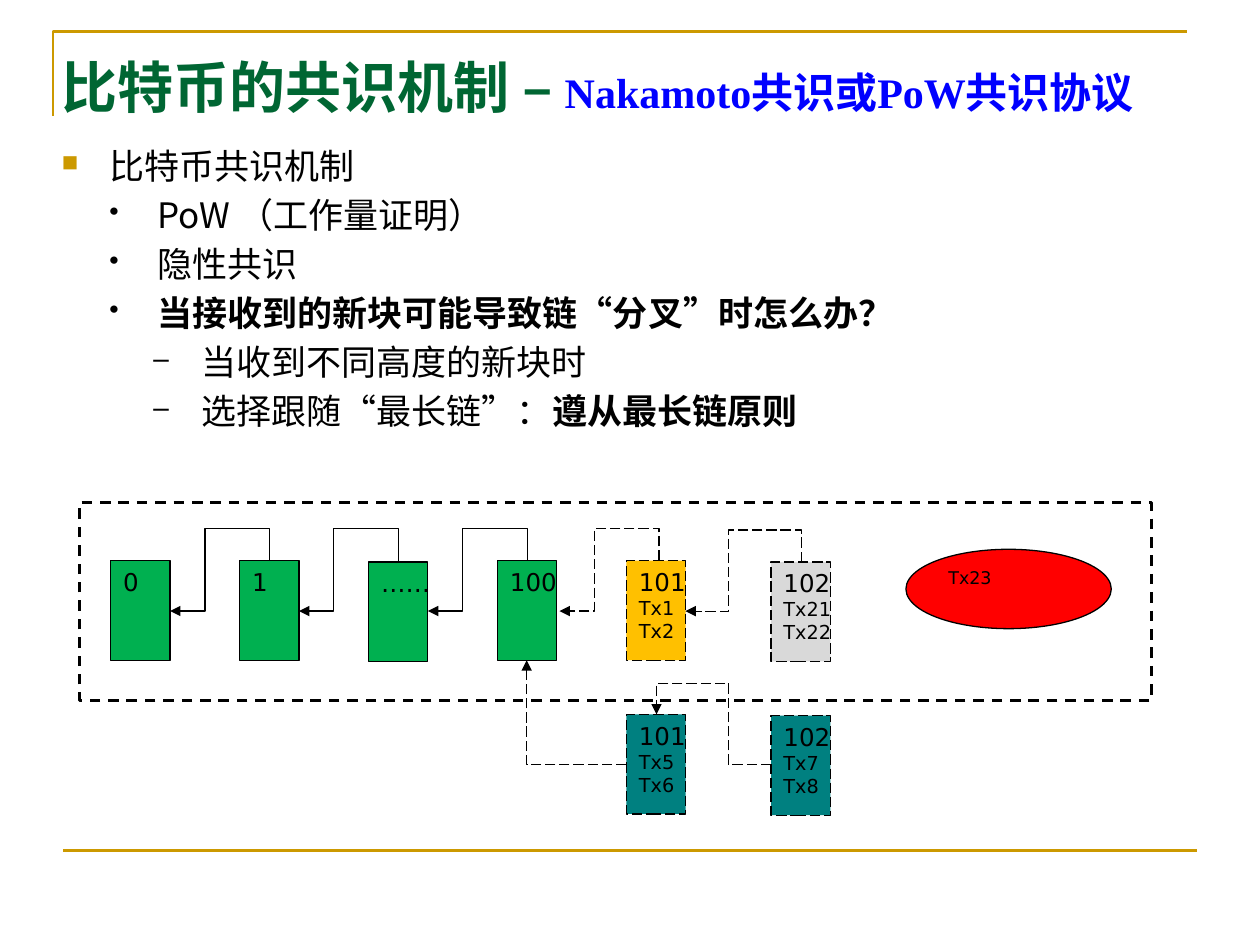
from lxml.etree import SubElement
from pptx import Presentation
from pptx.dml.color import RGBColor
from pptx.enum.dml import MSO_LINE as Dash
from pptx.enum.shapes import MSO_CONNECTOR as Conn, MSO_SHAPE as Form
from pptx.enum.text import MSO_ANCHOR as Anchor, PP_ALIGN as Align
from pptx.oxml.ns import qn
from pptx.util import Inches, Pt

BLACK = RGBColor(0, 0, 0)
GOLD = RGBColor(0xCC, 0x99, 0x00)
PINE = RGBColor(0x00, 0x66, 0x33)
BLUE = RGBColor(0x00, 0x00, 0xFF)
GREEN = RGBColor(0x00, 0xB0, 0x50)
AMBER = RGBColor(0xFF, 0xC0, 0x00)
GREY = RGBColor(0xD9, 0xD9, 0xD9)
TEAL = RGBColor(0x00, 0x80, 0x80)
RED = RGBColor(0xFF, 0x00, 0x00)
CJK, SANS, SERIF = "Noto Sans CJK SC", "DejaVu Sans", "Times New Roman"

TITLE = [("比特币的共识机制 –", 32, PINE), (" ", 28, PINE),
         ("Nakamoto共识或PoW共识协议", 24, BLUE)]

# level, runs of (text, bold)
BODY = [
    (0, [("比特币共识机制", False)]),
    (1, [("PoW （工作量证明）", False)]),
    (1, [("隐性共识", False)]),
    (1, [("当接收到的新块可能导致链“分叉”时怎么办？", True)]),
    (2, [("当收到不同高度的新块时", False)]),
    (2, [("选择跟随“最长链”：", False), ("遵从最长链原则", True)]),
]
# left indent, bullet, bullet size in percent, bullet colour
LEVELS = [(0.38, "■", 65, GOLD), (0.76, "•", 80, None), (1.11, "–", 80, None)]

WIDE, HIGH = 0.47, 0.79
STEP, LEFT, ROW = 1.023, 0.88, 4.45
FORK = 5.67
COLS = [LEFT + i * STEP for i in range(5)] + [6.12]

# column, top, fill, dash, lines
BLOCKS = [
    (0, ROW, GREEN, None, ["0"]),
    (1, ROW, GREEN, None, ["1"]),
    (2, ROW + 0.01, GREEN, None, ["……"]),
    (3, ROW, GREEN, None, ["100"]),
    (4, ROW, AMBER, Dash.LONG_DASH, ["101", "Tx1", "Tx2"]),
    (5, ROW + 0.01, GREY, Dash.LONG_DASH, ["102", "Tx21", "Tx22"]),
    (4, FORK, TEAL, Dash.LONG_DASH, ["101", "Tx5", "Tx6"]),
    (5, FORK + 0.01, TEAL, Dash.LONG_DASH, ["102", "Tx7", "Tx8"]),
]

# start, end, bends, turn, dash
HOP = (-0.64, 0.65)
LINKS = [((2.14 + i * STEP, ROW), (1.35 + i * STEP, 4.85), HOP, 270, None)
         for i in range(3)] + [
    ((5.23, ROW), (4.44, 4.85), HOP, 270, Dash.LONG_DASH),
    ((6.36, 4.46), (5.44, 4.85), (-0.65, 0.63), 270, Dash.LONG_DASH),
    ((4.97, 6.07), (4.18, 5.24), (), 180, Dash.LONG_DASH),
    ((6.12, 6.07), (5.21, 5.67), (0.37, 1.62), 180, Dash.LONG_DASH),
]


def add_run(para, text, size, font, color, bold=False):
    run = para.add_run()
    run.text = text
    face = run.font
    face.size, face.name, face.bold = Pt(size), font, bold
    face.color.rgb = color
    SubElement(face._element, qn("a:ea"), typeface=CJK)


def style(line, color, width, dash=None):
    line.color.rgb = color
    line.width = Pt(width)
    if dash:
        line.dash_style = dash


def add_form(shapes, form, box, fill, width=0.75, dash=None):
    shape = shapes.add_shape(form, *map(Inches, box))
    shape.shadow.inherit = False
    if fill is None:
        shape.fill.background()
    else:
        shape.fill.solid()
        shape.fill.fore_color.rgb = fill
    style(shape.line, BLACK, width, dash)
    return shape


def label(shape, lines, sizes):
    frame = shape.text_frame
    frame.word_wrap = False
    frame.vertical_anchor = Anchor.TOP
    for i, (text, size) in enumerate(zip(lines, sizes)):
        para = frame.add_paragraph() if i else frame.paragraphs[0]
        para.alignment = Align.LEFT
        add_run(para, text, size, SANS, BLACK)


def add_line(shapes, kind, start, end, color, width, dash=None):
    line = shapes.add_connector(kind, *map(Inches, start + end))
    style(line.line, color, width, dash)
    SubElement(line.element.spPr, qn("a:effectLst"))
    return line


def add_link(shapes, start, end, bends, turn, dash):
    """Draw an elbow arrow whose box is turned about its centre."""
    mid = [(a + b) / 2 for a, b in zip(start, end)]
    size = [abs(a - b) for a, b in zip(start, end)]
    if turn == 270:
        size.reverse()
    low = tuple(m - s / 2 for m, s in zip(mid, size))
    high = tuple(m + s / 2 for m, s in zip(mid, size))
    link = add_line(shapes, Conn.ELBOW, low, high, BLACK, 0.75, dash)
    props = link.element.spPr
    place = props.find(qn("a:xfrm"))
    place.set("rot", str(turn * 60000))
    if turn == 270:
        place.set("flipH", "1")
        place.set("flipV", "1")
    geom = props.find(qn("a:prstGeom"))
    geom.set("prst", f"bentConnector{len(bends) + 2}")
    guides = geom.find(qn("a:avLst"))
    for i, bend in enumerate(bends, 1):
        SubElement(guides, qn("a:gd"), name=f"adj{i}",
                   fmla=f"val {round(bend * 100000)}")
    SubElement(props.find(qn("a:ln")), qn("a:tailEnd"), type="triangle")


def set_bullet(para, level):
    indent, mark, size, color = LEVELS[level]
    props = para._p.get_or_add_pPr()
    props.set("marL", str(Inches(indent)))
    props.set("indent", str(Inches(-0.38)))
    if color is not None:
        tint = SubElement(props, qn("a:buClr"))
        SubElement(tint, qn("a:srgbClr"), val=str(color))
    SubElement(props, qn("a:buSzPct"), val=str(size * 1000))
    SubElement(props, qn("a:buChar"), char=mark)


def add_body(shapes):
    box = shapes.add_textbox(*map(Inches, (0.39, 1.07, 9.06, 2.7)))
    frame = box.text_frame
    frame.word_wrap = True
    frame.margin_top = Inches(0.08)
    for i, (level, runs) in enumerate(BODY):
        para = frame.add_paragraph() if i else frame.paragraphs[0]
        para.level = level
        para.line_spacing = Pt(24)
        para.space_before = Pt(4)
        set_bullet(para, level)
        for text, bold in runs:
            add_run(para, text, 20, CJK, BLACK, bold)


def add_title(title):
    title.left, title.top, title.width, title.height = map(
        Inches, (0.39, 0.29, 9.16, 0.71))
    frame = title.text_frame
    frame.word_wrap = True
    frame.vertical_anchor = Anchor.BOTTOM
    para = frame.paragraphs[0]
    para.alignment = Align.LEFT
    for text, size, color in TITLE:
        add_run(para, text, size, SERIF, color, True)


def add_rules(shapes):
    pen = shapes.build_freeform(Inches(0.42), Inches(0.92))
    pen.add_line_segments([(Inches(0.42), Inches(0.25)),
                           (Inches(9.42), Inches(0.25))], close=False)
    corner = pen.convert_to_shape()
    corner.shadow.inherit = False
    corner.fill.background()
    style(corner.line, GOLD, 1.5)
    add_line(shapes, Conn.STRAIGHT, (0.5, 6.75), (9.5, 6.75), GOLD, 1.5)


def main():
    deck = Presentation()
    deck.slide_width, deck.slide_height = Inches(10), Inches(7.5)
    shapes = deck.slides.add_slide(deck.slide_layouts[5]).shapes
    add_title(shapes.title)
    add_rules(shapes)
    add_body(shapes)
    add_form(shapes, Form.RECTANGLE, (0.63, 3.99, 8.51, 1.57), None, 1.5, Dash.DASH)
    for col, top, fill, dash, lines in BLOCKS:
        box = (COLS[col], top, WIDE, HIGH)
        block = add_form(shapes, Form.RECTANGLE, box, fill, dash=dash)
        label(block, lines, (14, 11, 11))
    pool = add_form(shapes, Form.OVAL, (7.19, 4.36, 1.63, 0.63), RED)
    label(pool, ["Tx23"], [10])
    for link in LINKS:
        add_link(shapes, *link)
    deck.save("out.pptx")


if __name__ == "__main__":
    main()
